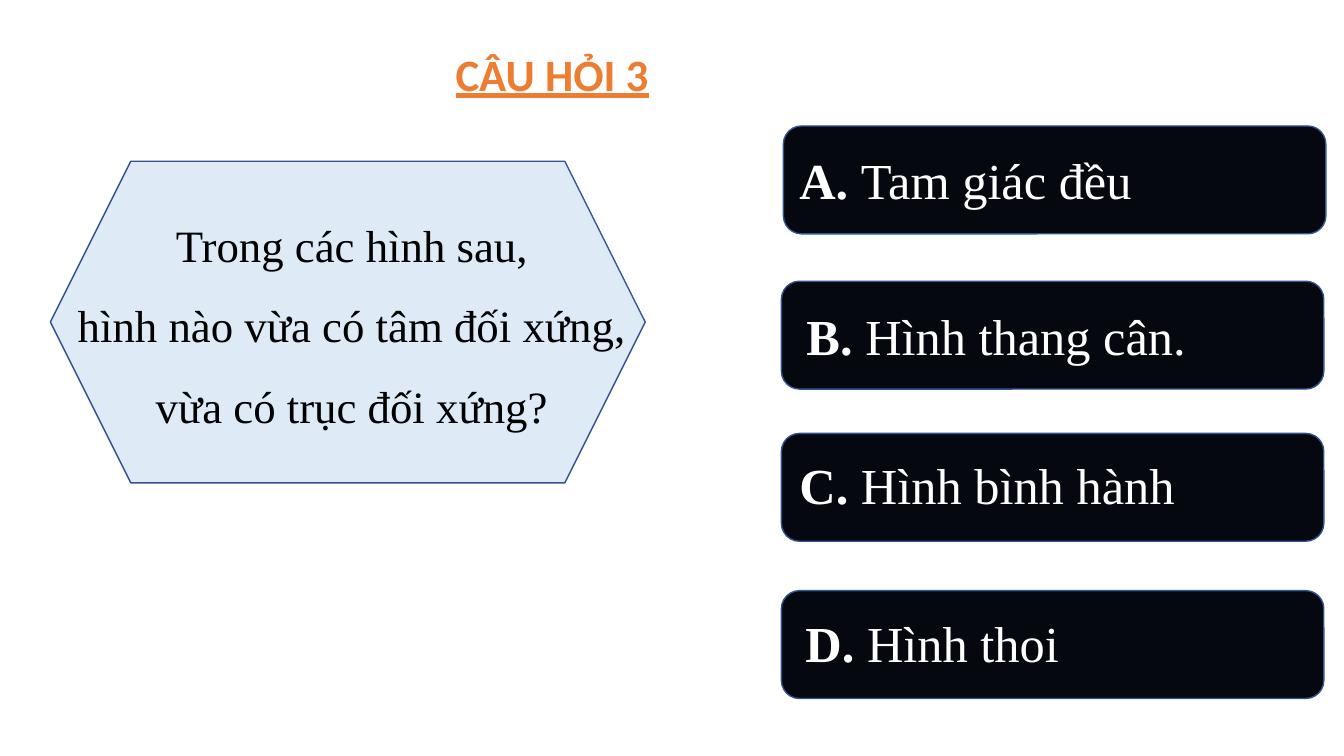
import pptx
import pptx.dml.color
import pptx.enum.shapes
import pptx.enum.text
import pptx.util

SCALE = 9144  # EMU in one px, 100 px to the inch
SHAPE = pptx.enum.shapes.MSO_SHAPE
ALIGN = pptx.enum.text.PP_ALIGN
SERIF = "Times New Roman"
COLORS = {
    "title": "ED7D31",
    "pale": "DEEBF7",
    "dark": "060810",
    "edge": "325491",
    "black": "000000",
    "white": "FFFFFF",
}
# label, answer, bar left and top, text left, top and width
CHOICES = [
    ("A. ", "Tam giác đều", 777, 125, 783, 143, 520),
    ("B. ", "Hình thang cân.", 775, 279, 790, 298, 588),
    ("C. ", "Hình bình hành", 775, 430, 783, 446, 582),
    ("D. ", "Hình thoi", 775, 586, 789, 602, 404),
]


def px(*values):
    return [pptx.util.Emu(value * SCALE) for value in values]


def color(name):
    return pptx.dml.color.RGBColor.from_string(COLORS[name])


def add_panel(shapes, kind, box, fill):
    panel = shapes.add_shape(kind, *px(*box))
    panel.shadow.inherit = False
    panel.fill.solid()
    panel.fill.fore_color.rgb = color(fill)
    panel.line.color.rgb = color("edge")
    panel.line.width = pptx.util.Pt(1)


def add_text(shapes, box, lines, size, face, tint):
    """Add a text box with one paragraph per line; a line is a list of runs."""
    frame = shapes.add_textbox(*px(*box)).text_frame
    frame.word_wrap = True
    for index, runs in enumerate(lines):
        para = frame.add_paragraph() if index else frame.paragraphs[0]
        para.font.size = pptx.util.Pt(size)
        para.font.name = face
        para.font.color.rgb = color(tint)
        for text in runs:
            para.add_run().text = text
    return frame.paragraphs


def add_title(shapes):
    para = add_text(shapes, (442, 41, 336, 59), [["CÂU HỎI 3"]],
                    32, "Calibri", "title")[0]
    para.font.bold = True
    para.font.underline = True


def add_question(shapes):
    group = shapes.add_group_shape().shapes
    add_panel(group, SHAPE.HEXAGON, (50, 160, 590, 319), "pale")
    lines = [
        ["Trong các hình sau,"],
        ["hình nào vừa có tâm đối xứng,"],
        ["vừa có trục đối xứng?"],
    ]
    for para in add_text(group, (40, 184, 618, 244), lines, 32, SERIF, "black"):
        para.alignment = ALIGN.CENTER
        para.line_spacing = 1.5


def add_choice(shapes, label, answer, left, top, text_left, text_top, width):
    add_panel(shapes, SHAPE.ROUNDED_RECTANGLE, (left, top, 538, 107), "dark")
    para = add_text(shapes, (text_left, text_top, width, 71),
                    [[label, answer]], 36, SERIF, "white")[0]
    para.runs[0].font.bold = True


def main():
    deck = pptx.Presentation()
    deck.slide_width, deck.slide_height = px(1333, 750)
    shapes = deck.slides.add_slide(deck.slide_layouts[6]).shapes
    add_question(shapes)
    add_title(shapes)
    for choice in CHOICES:
        add_choice(shapes, *choice)
    deck.save("out.pptx")


if __name__ == "__main__":
    main()
